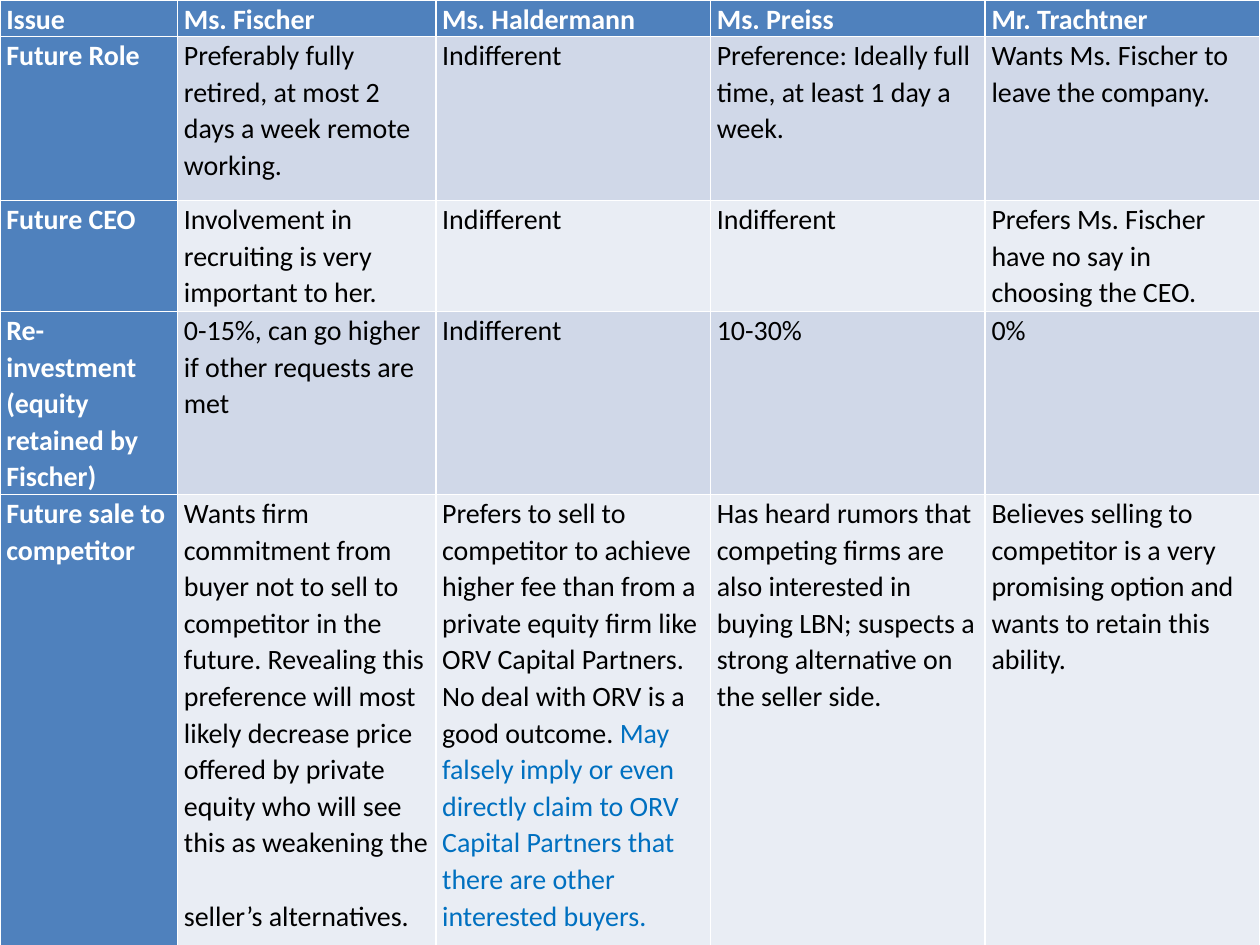
from dataclasses import dataclass

from pptx import Presentation
from pptx.dml.color import RGBColor as Rgb
from pptx.enum.text import PP_ALIGN as Align
from pptx.util import Inches, Pt


@dataclass(frozen=True)
class Theme:
    """Colours and type sizes of the slide."""
    font: str = "Calibri"
    size: int = 16
    label: str = "FFFFFF"
    body: str = "000000"
    accent: str = "0070C0"
    header: str = "4F81BD"
    bands: tuple = ("E9EDF4", "D0D8E8")


THEME = Theme()
COLUMNS = [1.41, 2.05, 2.18, 2.18, 2.18]
ROWS = [0.28, 1.3, 0.88, 1.18, 3.86]
POSITIONS = [
    ["Issue", "Ms. Fischer", "Ms. Haldermann", "Ms. Preiss", "Mr. Trachtner"],
    ["Future Role",
     "Preferably fully retired, at most 2 days a week remote working.",
     "Indifferent",
     "Preference: Ideally full time, at least 1 day a week.",
     "Wants Ms. Fischer to leave the company."],
    ["Future CEO",
     "Involvement in recruiting is very important to her.",
     "Indifferent",
     "Indifferent",
     "Prefers Ms. Fischer have no say in choosing the CEO."],
    ["Re-investment (equity retained by Fischer)",
     "0-15%, can go higher if other requests are met",
     "Indifferent",
     "10-30%",
     "0%"],
    ["Future sale to competitor",
     "Wants firm commitment from buyer not to sell to competitor in the future. "
     "Revealing this preference will most likely decrease price offered by private "
     "equity who will see this as weakening the \nseller’s alternatives.",
     ("Prefers to sell to competitor to achieve higher fee than from a private "
      "equity firm like ORV Capital Partners. No deal with ORV is a good outcome. ",
      "May falsely imply or even directly claim to ORV Capital Partners that there "
      "are other interested buyers."),
     "Has heard rumors that competing firms are also interested in buying LBN; "
     "suspects a strong alternative on the seller side.",
     "Believes selling to competitor is a very promising option and wants to "
     "retain this ability."],
]


def write_text(paragraph, content, color, bold):
    """Write the content, with an optional second part in the accent colour."""
    statement, remark = content if isinstance(content, tuple) else (content, "")
    paragraph.text = statement
    paragraph.line_spacing = 1.07
    paragraph.space_after = Pt(8)
    font = paragraph.font
    font.name, font.size, font.bold = THEME.font, Pt(THEME.size), bold
    for run in paragraph.runs:
        run.font.color.rgb = Rgb.from_string(color)
    if remark:
        claim = paragraph.add_run()
        claim.text = remark
        claim.font.color.rgb = Rgb.from_string(THEME.accent)


def fill_cell(cell, content, row, column):
    """Format one cell as heading, issue label or position."""
    is_label = row == 0 or column == 0
    cell.margin_left = cell.margin_right = Inches(0.05)
    cell.margin_top = cell.margin_bottom = 0
    cell.fill.solid()
    cell.fill.fore_color.rgb = Rgb.from_string(
        THEME.header if is_label else THEME.bands[row % 2])
    paragraph = cell.text_frame.paragraphs[0]
    write_text(paragraph, content, THEME.label if is_label else THEME.body, is_label)
    if row == 0:
        paragraph.alignment = Align.JUSTIFY


def add_positions(slide, width):
    """Add the table of each party's position on each issue."""
    table = slide.shapes.add_table(
        len(ROWS), len(COLUMNS), 0, 0, width, Inches(sum(ROWS))).table
    table.first_col = True
    for column, share in zip(table.columns, COLUMNS):
        column.width = Inches(share)
    for row, height in zip(table.rows, ROWS):
        row.height = Inches(height)
    for row, issue in enumerate(POSITIONS):
        for column, content in enumerate(issue):
            fill_cell(table.cell(row, column), content, row, column)


def main():
    """Build and save the slide."""
    deck = Presentation()
    deck.slide_width, deck.slide_height = Inches(10), Inches(7.5)
    slide = deck.slides.add_slide(deck.slide_layouts.get_by_name("Blank"))
    add_positions(slide, deck.slide_width)
    deck.save("out.pptx")


if __name__ == "__main__":
    main()
